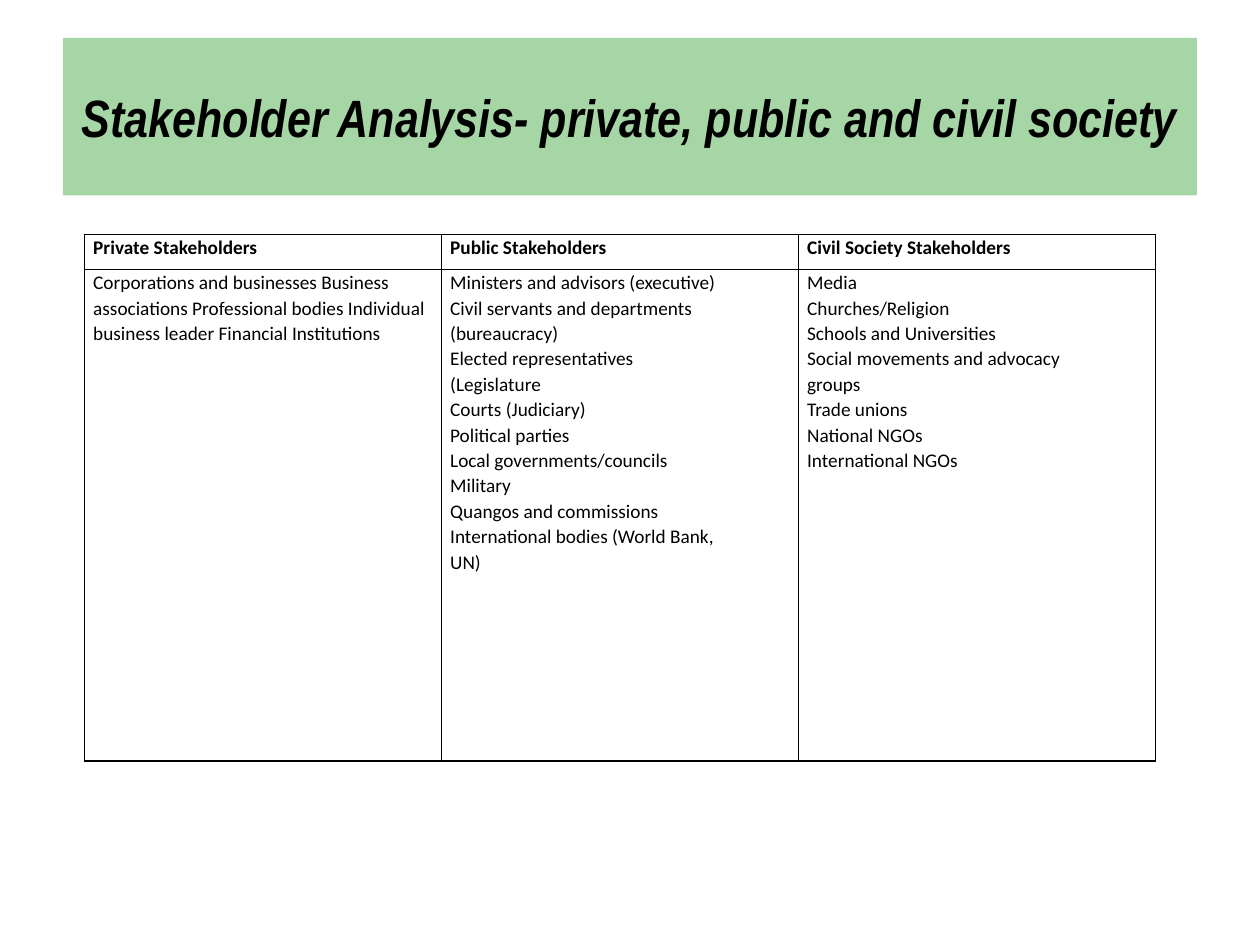
"""Build the slide that sorts stakeholders into private, public and civil society."""
from dataclasses import dataclass

from lxml import etree
from pptx import Presentation
from pptx.dml.color import RGBColor
from pptx.enum.shapes import MSO_SHAPE
from pptx.enum.text import MSO_ANCHOR, PP_ALIGN
from pptx.oxml.ns import qn
from pptx.util import Inches, Pt

RECTANGLE = MSO_SHAPE.RECTANGLE
MIDDLE, TOP = MSO_ANCHOR.MIDDLE, MSO_ANCHOR.TOP
CENTER, LEFT = PP_ALIGN.CENTER, PP_ALIGN.LEFT

COLORS = {"banner": "A7D6A6", "ink": "000000"}
WIDTH, HEIGHT = Inches(10), Inches(7.5)
ROW_HEIGHTS = (Inches(0.28), Inches(3.9))
BORDER_SIDES = ("a:lnL", "a:lnR", "a:lnT", "a:lnB")


@dataclass(frozen=True)
class Box:
    """Hold a frame as shares of the slide's size."""
    left: float
    top: float
    width: float
    height: float

    def frame(self) -> tuple[int, int, int, int]:
        """Return the frame in slide units."""
        return (int(self.left * WIDTH), int(self.top * HEIGHT),
                int(self.width * WIDTH), int(self.height * HEIGHT))


@dataclass(frozen=True)
class Sector:
    """Hold one column of the table."""
    heading: str
    members: tuple[str, ...]


BANNER = Box(0.05, 0.04, 0.9, 1 / 6)
GRID = Box(0.067, 0.248, 0.85, 0.557)
TITLE = "Stakeholder Analysis- private, public and civil society"
SECTORS = (
    Sector("Private Stakeholders", (
        "Corporations and businesses Business associations Professional bodies "
        "Individual business leader Financial Institutions",
    )),
    Sector("Public Stakeholders", (
        "Ministers and advisors (executive)",
        "Civil servants and departments",
        "(bureaucracy)",
        "Elected representatives",
        "(Legislature",
        "Courts (Judiciary)",
        "Political parties",
        "Local governments/councils",
        "Military",
        "Quangos and commissions",
        "International bodies (World Bank,",
        "UN)",
    )),
    Sector("Civil Society Stakeholders", (
        "Media",
        "Churches/Religion",
        "Schools and Universities",
        "Social movements and advocacy",
        "groups",
        "Trade unions",
        "National NGOs",
        "International NGOs",
    )),
)


def write(frame, lines: tuple[str, ...], *, font: str = "Calibri", size: float = 11,
          bold: bool = False, italic: bool = False, align=LEFT,
          spacing: float = 1.07) -> None:
    """Write each line as a paragraph in the given format."""
    frame.word_wrap = True
    for index, line in enumerate(lines):
        paragraph = frame.add_paragraph() if index else frame.paragraphs[0]
        paragraph.alignment = align
        paragraph.line_spacing = spacing
        run = paragraph.add_run()
        run.text = line
        run.font.name = font
        run.font.size = Pt(size)
        run.font.bold = bold
        run.font.italic = italic
        run.font.color.rgb = RGBColor.from_string(COLORS["ink"])


def draw_banner(slide) -> None:
    """Draw the title on its green band."""
    banner = slide.shapes.add_shape(RECTANGLE, *BANNER.frame())
    banner.shadow.inherit = False
    banner.fill.solid()
    banner.fill.fore_color.rgb = RGBColor.from_string(COLORS["banner"])
    banner.line.fill.background()
    banner.text_frame.vertical_anchor = MIDDLE
    write(banner.text_frame, (TITLE,), font="Arial Narrow", size=30,
          bold=True, italic=True, align=CENTER, spacing=1.0)


def add_borders(cell) -> None:
    """Rule all four sides of a cell."""
    properties = cell._tc.get_or_add_tcPr()
    for position, side in enumerate(BORDER_SIDES):
        line = etree.Element(qn(side), w=str(Pt(1)))
        fill = etree.SubElement(line, qn("a:solidFill"))
        etree.SubElement(fill, qn("a:srgbClr"), val=COLORS["ink"])
        properties.insert(position, line)


def fill_cell(cell, lines: tuple[str, ...], bold: bool) -> None:
    """Give a cell its text, margins and borders."""
    cell.fill.background()
    cell.margin_left = cell.margin_right = Inches(0.07)
    cell.margin_top = cell.margin_bottom = 0
    cell.vertical_anchor = TOP
    write(cell.text_frame, lines, bold=bold)
    add_borders(cell)


def draw_sectors(slide) -> None:
    """Draw the table with one column for each sector."""
    table = slide.shapes.add_table(len(ROW_HEIGHTS), len(SECTORS), *GRID.frame()).table
    table.first_row = table.horz_banding = False
    for row, height in zip(table.rows, ROW_HEIGHTS):
        row.height = height
    for column, sector in enumerate(SECTORS):
        fill_cell(table.cell(0, column), (sector.heading,), bold=True)
        fill_cell(table.cell(1, column), sector.members, bold=False)


def main() -> None:
    """Build and save the presentation."""
    presentation = Presentation()
    presentation.slide_width, presentation.slide_height = WIDTH, HEIGHT
    slide = presentation.slides.add_slide(presentation.slide_layouts[6])
    draw_banner(slide)
    draw_sectors(slide)
    presentation.save("out.pptx")


if __name__ == "__main__":
    main()
